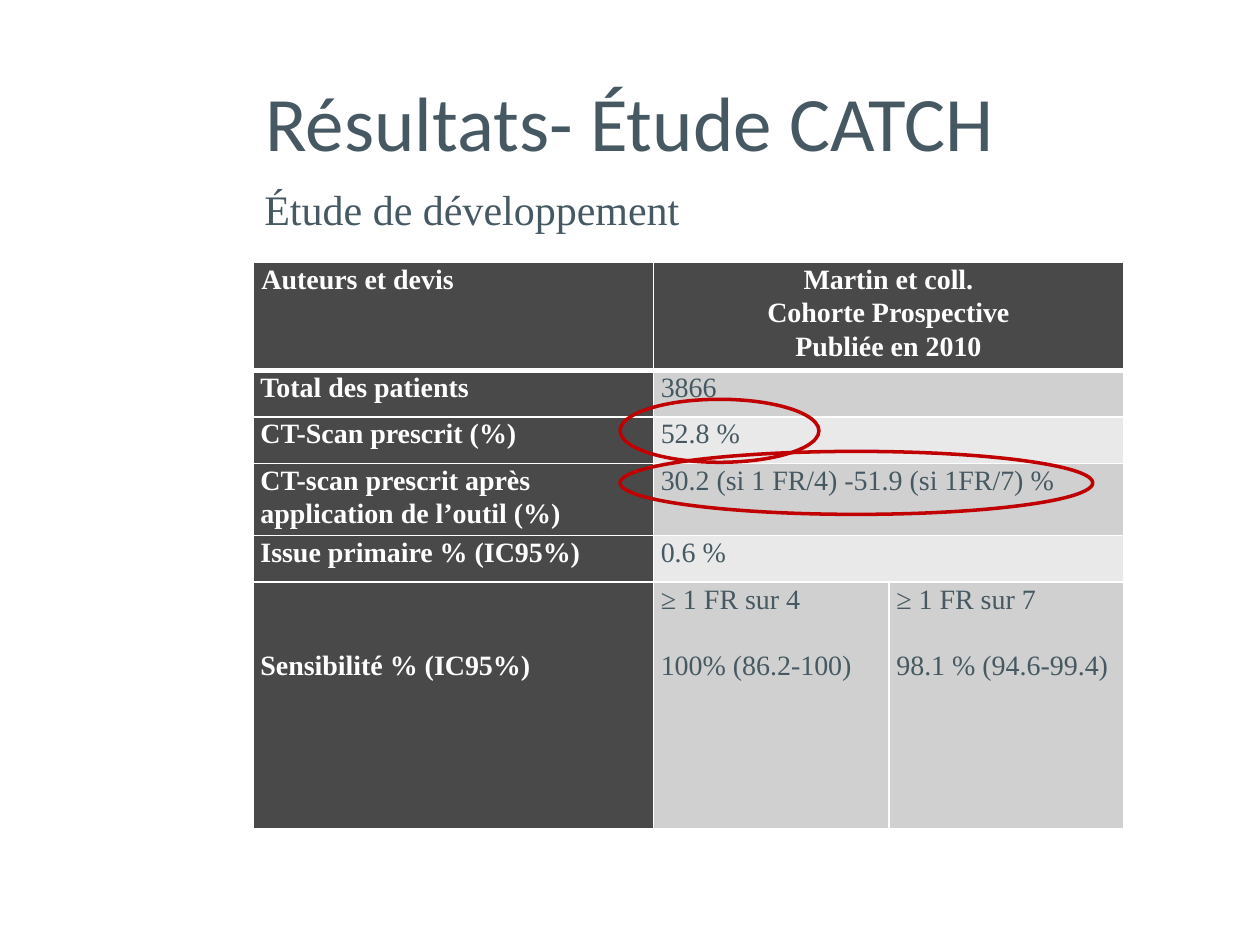
from lxml.etree import SubElement
from pptx import Presentation
from pptx.dml.color import RGBColor
from pptx.enum.shapes import MSO_SHAPE
from pptx.enum.text import MSO_ANCHOR, PP_ALIGN
from pptx.oxml.ns import qn
from pptx.util import Cm, Pt

COLORS = {
    "slate": "465962",
    "white": "FFFFFF",
    "dark": "494949",
    "gray": "D0D0D0",
    "light": "E9E9E9",
    "red": "C00000",
}
SERIF = "Times New Roman"
BLANK_LINE = Pt(19)

HEADER = ("Auteurs et devis", ["Martin et coll.", "Cohorte Prospective", "Publiée en 2010"])
RESULTS = [
    ("Total des patients", "3866"),
    ("CT-Scan prescrit (%)", "52.8 %"),
    ("CT-scan prescrit après application de l’outil (%)", "30.2 (si 1 FR/4) -51.9 (si 1FR/7) %"),
    ("Issue primaire % (IC95%)", "0.6 %"),
]
SENSITIVITY = ("Sensibilité % (IC95%)", [
    ["≥ 1 FR sur 4", "100% (86.2-100)"],
    ["≥ 1 FR sur 7", "98.1 % (94.6-99.4)"],
])


def color(name):
    return RGBColor.from_string(COLORS[name])


def style_font(font, size, face, color_name, bold=False):
    font.size = Pt(size)
    font.name = face
    font.bold = bold
    font.color.rgb = color(color_name)


def add_heading(slide, box, text, size, face, align=PP_ALIGN.LEFT, anchor=MSO_ANCHOR.TOP):
    frame = slide.shapes.add_textbox(*box).text_frame
    frame.word_wrap = True
    frame.vertical_anchor = anchor
    paragraph = frame.paragraphs[0]
    paragraph.text = text
    paragraph.alignment = align
    style_font(paragraph.font, size, face, "slate")


def set_borders(cell, top=1, bottom=1):
    """White borders, widths in points; call before filling the cell."""
    properties = cell._tc.get_or_add_tcPr()
    for side, width in (("L", 1), ("R", 1), ("T", top), ("B", bottom)):
        line = SubElement(properties, qn(f"a:ln{side}"), w=str(Pt(width)))
        fill = SubElement(line, qn("a:solidFill"))
        SubElement(fill, qn("a:srgbClr"), val=COLORS["white"])


def fill_cell(cell, lines, fill, label=False, align=PP_ALIGN.LEFT, gap=0, inset=Cm(0.15), top=0):
    cell.fill.solid()
    cell.fill.fore_color.rgb = color(fill)
    cell.margin_left = cell.margin_right = inset
    cell.margin_top, cell.margin_bottom = top, 0
    cell.text = "\n".join(lines)
    for index, paragraph in enumerate(cell.text_frame.paragraphs):
        paragraph.alignment = align
        paragraph.line_spacing = 1.07
        if index and gap:
            paragraph.space_before = gap
        style_font(paragraph.font, 16, SERIF, "white" if label else "slate", label)


def add_results_table(slide, left, top):
    widths = [Cm(8.07), Cm(4.75), Cm(4.73)]
    heights = [Cm(0.94)] * (len(RESULTS) + 1) + [Cm(4.97)]
    table = slide.shapes.add_table(
        len(heights), len(widths), left, top, sum(widths), sum(heights)).table
    for column, width in zip(table.columns, widths):
        column.width = width
    for index, height in enumerate(heights):
        table.rows[index].height = height
        for cell in table.rows[index].cells:
            set_borders(cell, top=3 if index == 1 else 1, bottom=3 if index == 0 else 1)

    last = len(heights) - 1
    for index in range(last):
        table.cell(index, 1).merge(table.cell(index, 2))

    title, study = HEADER
    fill_cell(table.cell(0, 0), [title], "dark", label=True, inset=Cm(0.17))
    fill_cell(table.cell(0, 1), study, "dark", label=True, align=PP_ALIGN.CENTER, inset=Cm(0.17))
    for index, (label, value) in enumerate(RESULTS, start=1):
        fill_cell(table.cell(index, 0), [label], "dark", label=True)
        fill_cell(table.cell(index, 1), [value], "gray" if index % 2 else "light")

    label, groups = SENSITIVITY
    fill_cell(table.cell(last, 0), [label], "dark", label=True, top=2 * BLANK_LINE)
    for index, lines in enumerate(groups, start=1):
        fill_cell(table.cell(last, index), lines, "gray", gap=BLANK_LINE)


def add_highlight(slide, left, top, width, height):
    ring = slide.shapes.add_shape(MSO_SHAPE.OVAL, left, top, width, height)
    ring.shadow.inherit = False
    ring.fill.background()
    ring.line.color.rgb = color("red")
    ring.line.width = Pt(2)


def build_slide(presentation):
    slide = presentation.slides.add_slide(presentation.slide_layouts[6])
    add_heading(slide, (Cm(1.27), Cm(0.84), Cm(22.86), Cm(3.18)), "Résultats- Étude CATCH",
                44, "Calibri", PP_ALIGN.CENTER, MSO_ANCHOR.MIDDLE)
    add_results_table(slide, Cm(5.1), Cm(5.29))
    add_heading(slide, (Cm(5.08), Cm(3.58), Cm(8.97), Cm(1.27)), "Étude de développement",
                24, SERIF)
    for top, width in ((Cm(8.05), Cm(4.01)), (Cm(9.1), Cm(9.53))):
        add_highlight(slide, Cm(12.5), top, width, Cm(1.27))


def main():
    presentation = Presentation()
    presentation.slide_width, presentation.slide_height = Cm(25.4), Cm(19.05)
    build_slide(presentation)
    presentation.save("out.pptx")


if __name__ == "__main__":
    main()
